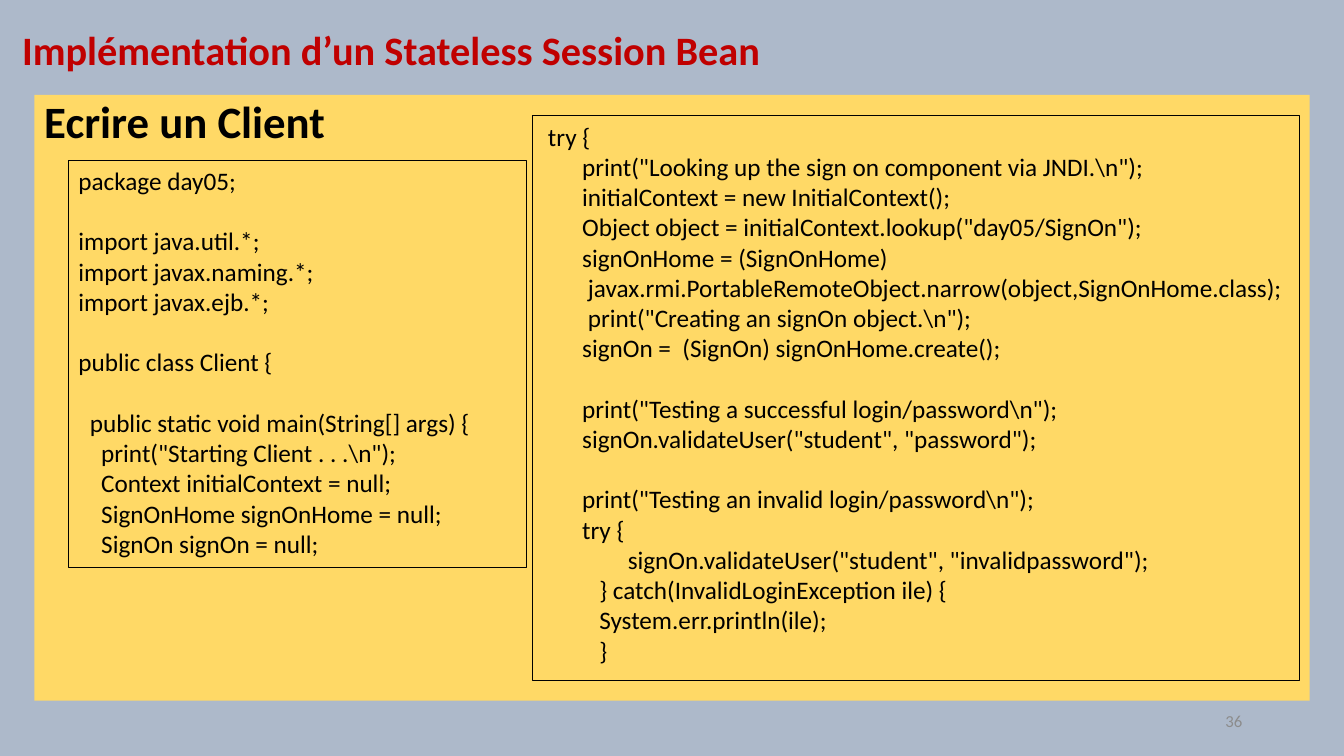
import pptx
import pptx.dml.color
import pptx.enum.shapes
import pptx.enum.text
import pptx.util
from pptx.util import Inches

TITLE = "Implémentation d’un Stateless Session Bean"
HEADING = "Ecrire un Client"
PAGE_NUMBER = "36"

# Each code line is (indent in characters, text); None is a blank line.
CLIENT_SETUP = [
    (0, "package day05;"),
    None,
    (0, "import java.util.*;"),
    (0, "import javax.naming.*;"),
    (0, "import javax.ejb.*;"),
    None,
    (0, "public class Client {"),
    None,
    (2, "public static void main(String[] args) {"),
    (4, 'print("Starting Client . . .\\n");'),
    (4, "Context initialContext = null;"),
    (4, "SignOnHome signOnHome = null;"),
    (4, "SignOn signOn = null;"),
]
CLIENT_CALLS = [
    (1, "try {"),
    (7, 'print("Looking up the sign on component via JNDI.\\n");'),
    (7, "initialContext = new InitialContext();"),
    (7, 'Object object = initialContext.lookup("day05/SignOn");'),
    (7, "signOnHome = (SignOnHome)"),
    (8, "javax.rmi.PortableRemoteObject.narrow(object,SignOnHome.class);"),
    (8, 'print("Creating an signOn object.\\n");'),
    (7, "signOn =  (SignOn) signOnHome.create();"),
    None,
    (7, 'print("Testing a successful login/password\\n");'),
    (7, 'signOn.validateUser("student", "password");'),
    None,
    (7, 'print("Testing an invalid login/password\\n");'),
    (7, "try {"),
    (15, 'signOn.validateUser("student", "invalidpassword");'),
    (10, "} catch(InvalidLoginException ile) {"),
    (10, "System.err.println(ile);"),
    (10, "}"),
]
CODE_PANELS = [
    ((0.68, 1.59, 4.54, 4.04), CLIENT_SETUP),
    ((5.28, 1.15, 7.61, 5.6), CLIENT_CALLS),
]

FONT = "Calibri"
CODE_SIZE = 18
BLANK_LINE = 21.6  # points
CHARACTER_INDENT = 4.07  # points

TOP = pptx.enum.text.MSO_ANCHOR.TOP
MIDDLE = pptx.enum.text.MSO_ANCHOR.MIDDLE


def color(hex_string):
    return pptx.dml.color.RGBColor.from_string(hex_string)


def add_box(slide, place, fill=None, line=None, anchor=TOP):
    """Add a rectangle and return its text frame."""
    shape = slide.shapes.add_shape(
        pptx.enum.shapes.MSO_SHAPE.RECTANGLE, *map(Inches, place))
    shape.shadow.inherit = False
    if fill:
        shape.fill.solid()
        shape.fill.fore_color.rgb = color(fill)
    else:
        shape.fill.background()
    if line:
        shape.line.color.rgb = color(line)
        shape.line.width = pptx.util.Pt(0.75)
    else:
        shape.line.fill.background()
    shape.text_frame.word_wrap = True
    shape.text_frame.vertical_anchor = anchor
    return shape.text_frame


def write(paragraph, text, size, text_color="000000", bold=False, align="LEFT"):
    paragraph.alignment = getattr(pptx.enum.text.PP_ALIGN, align)
    run = paragraph.add_run()
    run.text = text
    run.font.name = FONT
    run.font.size = pptx.util.Pt(size)
    run.font.bold = bold
    run.font.color.rgb = color(text_color)


def add_code(slide, place, lines):
    frame = add_box(slide, place, line="000000")
    paragraph = frame.paragraphs[0]
    gap = 0
    for number, line in enumerate(lines):
        if line is None:
            gap += BLANK_LINE
            continue
        if number:
            paragraph = frame.add_paragraph()
        indent, text = line
        properties = paragraph._p.get_or_add_pPr()
        properties.set("marL", str(int(pptx.util.Pt(indent * CHARACTER_INDENT))))
        properties.set("indent", "0")
        paragraph.space_before = pptx.util.Pt(gap)
        write(paragraph, text, CODE_SIZE)
        gap = 0


def main():
    presentation = pptx.Presentation()
    presentation.slide_width = Inches(13.33)
    presentation.slide_height = Inches(7.5)
    slide = presentation.slides.add_slide(presentation.slide_layouts[6])
    slide.background.fill.solid()
    slide.background.fill.fore_color.rgb = color("ADB9CA")

    title = add_box(slide, (0.12, 0.24, 10.45, 0.56), anchor=MIDDLE).paragraphs[0]
    title.line_spacing = 0.9
    write(title, TITLE, 28.8, "C00000", bold=True)

    heading = add_box(slide, (0.34, 0.94, 12.65, 6.01), fill="FFD966").paragraphs[0]
    heading.line_spacing = 0.9
    write(heading, HEADING, 32, bold=True)

    page = add_box(slide, (9.42, 6.95, 3, 0.4), anchor=MIDDLE).paragraphs[0]
    write(page, PAGE_NUMBER, 12, "8C8C8C", align="RIGHT")

    for place, lines in CODE_PANELS:
        add_code(slide, place, lines)

    presentation.save("out.pptx")


if __name__ == "__main__":
    main()
